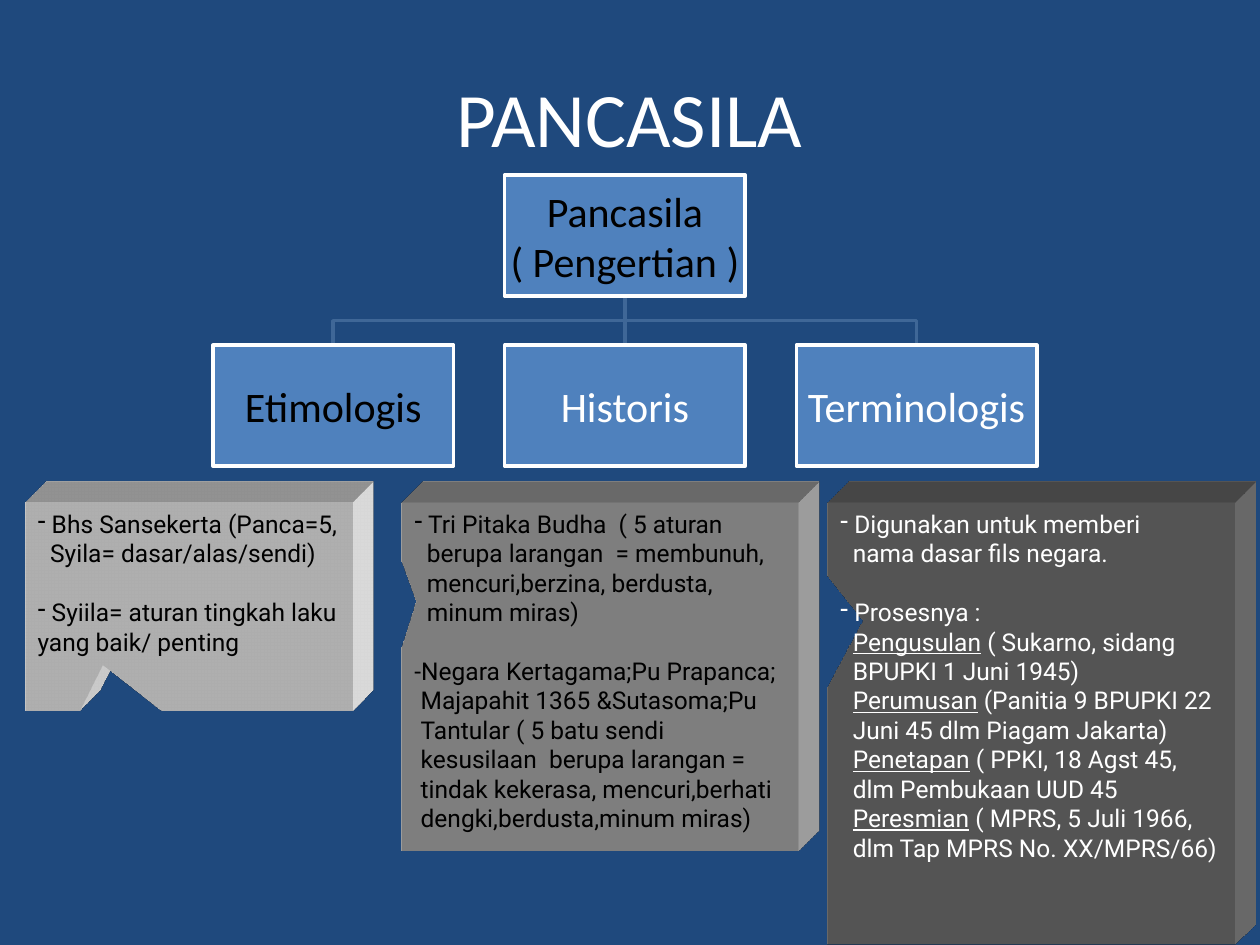
from pptx import Presentation
from pptx import util as u
from pptx.dml.color import RGBColor
from pptx.enum import shapes, text
from pptx.oxml import parse_xml
from pptx.oxml.ns import nsdecls

COLORS = {
    "page": "1F497D", "node": "4F81BD", "branch": "3F6797",
    "white": "FFFFFF", "black": "000000",
    "light": "F8F8F8", "middle": "B2B2B2", "dark": "777777",
}
WIDTH, HEIGHT = 10, 7.5
NODE_W, NODE_H = 1.91, 0.96
COLUMN, ROW = 2.315, 1.35          # pitch of the tree grid
TREE_LEFT, TREE_TOP = 1.69, 1.39
BLANK_LINE = 16.8                  # points
INDENT = 0.05                      # inches per indent step

NODES = [  # column, row, lines, text colour
    (1, 0, ["Pancasila", "( Pengertian )"], "black"),
    (0, 1, ["Etimologis"], "black"),
    (1, 1, ["Historis"], "white"),
    (2, 1, ["Terminologis"], "white"),
]

# Each line: kind, then (text, underlined) spans.
# "-" is a bullet, a digit is an indent level, "+" means a gap above.
CALLOUTS = [
    ((0.2, 3.99, 2.6, 1.65), (-0.263, 0.28), "light", "black", [
        ("-", " Bhs Sansekerta (Panca=5,"),
        ("2", "Syila= dasar/alas/sendi)"),
        ("-+", " Syiila= aturan tingkah laku yang baik/ penting"),
    ]),
    ((3.19, 3.99, 3.15, 2.76), (-0.463, -0.217), "middle", "black", [
        ("-", " Tri Pitaka Budha  ( 5 aturan"),
        ("2", "berupa larangan  = membunuh,"),
        ("2", "mencuri,berzina, berdusta,"),
        ("2", "minum miras)"),
        ("0+", "-Negara Kertagama;Pu Prapanca;"),
        ("1", "Majapahit 1365 &Sutasoma;Pu"),
        ("1", "Tantular ( 5 batu sendi"),
        ("1", "kesusilaan  berupa larangan ="),
        ("1", "tindak kekerasa, mencuri,berhati"),
        ("1", "dengki,berdusta,minum miras)"),
    ]),
    ((6.57, 3.99, 3.23, 3.51), (-0.413, -0.233), "dark", "white", [
        ("-", " Digunakan untuk memberi"),
        ("2", "nama dasar fils negara."),
        ("-+", " Prosesnya :"),
        ("2", "Pengusulan", " ( Sukarno, sidang"),
        ("2", "BPUPKI 1 Juni 1945)"),
        ("2", "Perumusan", " (Panitia 9 BPUPKI 22"),
        ("2", "Juni 45 dlm Piagam Jakarta)"),
        ("2", "Penetapan", " ( PPKI, 18 Agst 45,"),
        ("2", "dlm Pembukaan UUD 45"),
        ("2", "Peresmian", " ( MPRS, 5 Juli 1966,"),
        ("2", "dlm Tap MPRS No. XX/MPRS/66)"),
    ]),
]


def rgb(name):
    return RGBColor.from_string(COLORS[name])


def inches(box):
    return [u.Inches(length) for length in box]


def add_span(para, words, font, size, color, underline=False):
    span = para.add_run()
    span.text = words
    span.font.name, span.font.size = font, u.Pt(size)
    span.font.color.rgb = rgb(color)
    if underline:
        span.font.underline = True


def paragraphs(frame, count):
    return [frame.paragraphs[0]] + [frame.add_paragraph() for _ in range(count - 1)]


def add_title(page, box, words):
    frame = page.shapes.add_textbox(*inches(box)).text_frame
    frame.word_wrap = True
    frame.vertical_anchor = text.MSO_ANCHOR.MIDDLE
    para = frame.paragraphs[0]
    para.alignment = text.PP_ALIGN.CENTER
    add_span(para, words, "Calibri", 44, "white")


def add_branch(page, points):
    builder = page.shapes.build_freeform(*inches(points[0]), scale=1.0)
    builder.add_line_segments([inches(point) for point in points[1:]], close=False)
    branch = builder.convert_to_shape()
    branch.shadow.inherit = False
    branch.fill.background()
    branch.line.color.rgb = rgb("branch")
    branch.line.width = u.Pt(2)


def add_node(page, box, lines, color):
    node = page.shapes.add_shape(shapes.MSO_SHAPE.RECTANGLE, *inches(box))
    node.shadow.inherit = False
    node.fill.solid()
    node.fill.fore_color.rgb = rgb("node")
    node.line.color.rgb = rgb("white")
    node.line.width = u.Pt(2)
    frame = node.text_frame
    frame.word_wrap = True
    frame.vertical_anchor = text.MSO_ANCHOR.MIDDLE
    frame.margin_left = frame.margin_right = u.Inches(0.02)
    frame.margin_top = frame.margin_bottom = u.Inches(0.02)
    for para, words in zip(paragraphs(frame, len(lines)), lines):
        para.alignment = text.PP_ALIGN.CENTER
        add_span(para, words, "Calibri", 24, color)


def add_tree(page, left, top):
    """Draw the root, its three children and the branches between them."""
    root_x, root_y = left + COLUMN + NODE_W / 2, top + NODE_H
    child_y = top + ROW
    middle_y = (root_y + child_y) / 2
    for column in (2, 1, 0):
        x = left + column * COLUMN + NODE_W / 2
        bend = [] if column == 1 else [(root_x, middle_y), (x, middle_y)]
        add_branch(page, [(root_x, root_y), *bend, (x, child_y)])
    for column, row, lines, color in NODES:
        box = (left + column * COLUMN, top + row * ROW, NODE_W, NODE_H)
        add_node(page, box, lines, color)


def extrude(shape, color):
    """Give the shape an oblique depth towards the top right."""
    properties = shape._element.spPr
    properties.append(parse_xml(
        f'<a:scene3d {nsdecls("a")}><a:camera prst="legacyObliqueTopRight"/>'
        '<a:lightRig rig="legacyFlat3" dir="b"/></a:scene3d>'))
    properties.append(parse_xml(
        f'<a:sp3d {nsdecls("a")} extrusionH="430200" prstMaterial="legacyMatte">'
        '<a:bevelT w="13500" h="13500" prst="angle"/>'
        '<a:bevelB w="13500" h="13500" prst="angle"/>'
        f'<a:extrusionClr><a:srgbClr val="{COLORS[color]}"/></a:extrusionClr></a:sp3d>'))


def format_line(para, kind):
    para.alignment = text.PP_ALIGN.LEFT
    if "+" in kind:
        para.space_before = u.Pt(BLANK_LINE)
    level = 0 if kind[0] == "-" else int(kind[0])
    properties = para._p.get_or_add_pPr()
    properties.set("marL", str(u.Inches(level * INDENT)))
    properties.set("indent", "0")
    if kind[0] == "-":
        properties.append(parse_xml(f'<a:buChar {nsdecls("a")} char="-"/>'))


def add_callout(page, box, tip, fill, color, lines):
    callout = page.shapes.add_shape(
        shapes.MSO_SHAPE.RECTANGULAR_CALLOUT, *inches(box))
    callout.adjustments[0], callout.adjustments[1] = tip
    callout.shadow.inherit = False
    callout.fill.solid()
    callout.fill.fore_color.rgb = rgb(fill)
    callout.line.fill.background()
    extrude(callout, fill)
    frame = callout.text_frame
    frame.word_wrap = True
    frame.vertical_anchor = text.MSO_ANCHOR.TOP
    for para, (kind, *spans) in zip(paragraphs(frame, len(lines)), lines):
        format_line(para, kind)
        for index, words in enumerate(spans):
            underline = len(spans) > 1 and index == 0
            add_span(para, words, "Roboto", 14, color, underline)


def main():
    deck = Presentation()
    deck.slide_width, deck.slide_height = inches((WIDTH, HEIGHT))
    page = deck.slides.add_slide(deck.slide_layouts[6])
    page.background.fill.solid()
    page.background.fill.fore_color.rgb = rgb("page")
    add_title(page, (0.05 * WIDTH, 0.04 * HEIGHT, 0.9 * WIDTH, 1.25), "PANCASILA")
    add_tree(page, TREE_LEFT, TREE_TOP)
    for callout in CALLOUTS:
        add_callout(page, *callout)
    deck.save("out.pptx")


if __name__ == "__main__":
    main()
